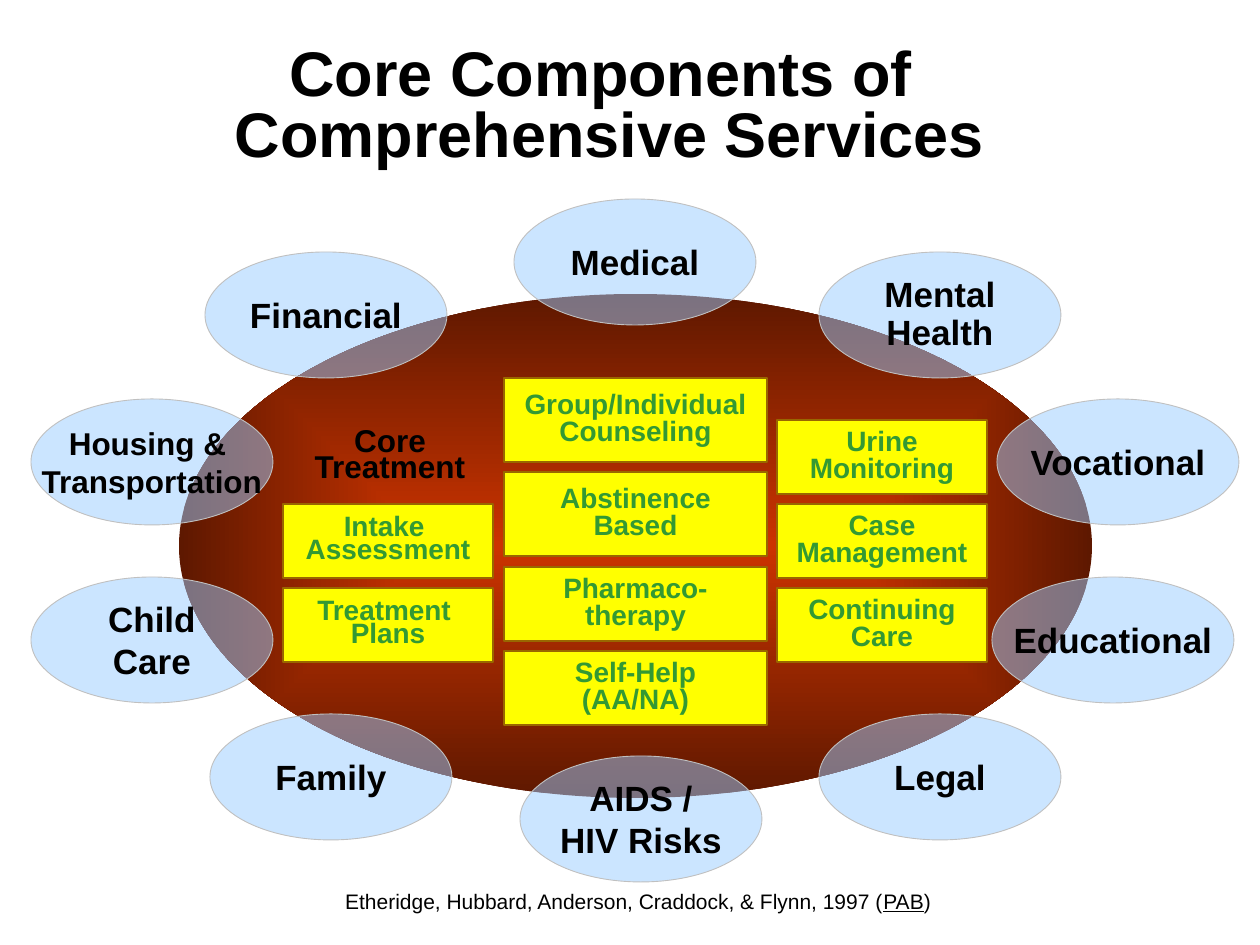
from lxml.etree import SubElement
from pptx import Presentation
from pptx.dml.color import RGBColor
from pptx.enum.shapes import MSO_SHAPE as SHAPE
from pptx.enum.text import MSO_ANCHOR as ANCHOR, MSO_AUTO_SIZE as AUTO, PP_ALIGN as ALIGN
from pptx.oxml.ns import qn
from pptx.util import Emu, Pt

SCALE = 914400 / 126


def px(n):
    return Emu(round(n * SCALE))


def rgb(value):
    return RGBColor.from_string(value)


class Deck:
    font = "Arial"
    ink = "000000"
    green = "339933"
    yellow = "FFFF00"
    brown = "996600"
    blue = "99CCFF"
    grey = "C0C0C0"
    core = ("CC3300", "5E1800")

    def __init__(self, slide):
        self.slide = slide

    def shape(self, kind, box, parent=None):
        sp = (parent or self.slide).shapes.add_shape(kind, *map(px, box))
        sp.shadow.inherit = False
        return sp

    def paint(self, sp, fill, line, width):
        sp.fill.solid()
        sp.fill.fore_color.rgb = rgb(fill)
        sp.line.color.rgb = rgb(line)
        sp.line.width = Pt(width)

    def run(self, p, text, size, color, bold=True, underline=None):
        r = p.add_run()
        r.text = text
        f = r.font
        f.name, f.size, f.bold, f.underline = self.font, Pt(size), bold, underline
        f.color.rgb = rgb(color)

    def fill_text(self, tf, paragraphs, size, color, spacing=None):
        for i, text in enumerate(paragraphs):
            p = tf.paragraphs[0] if i == 0 else tf.add_paragraph()
            p.alignment = ALIGN.CENTER
            p.line_spacing = spacing
            for j, line in enumerate(text.split("\n")):
                if j:
                    p.add_line_break()
                self.run(p, line, size, color)

    def label(self, box, parent=None, wrap=True, anchor=ANCHOR.TOP):
        sp = (parent or self.slide).shapes.add_textbox(*map(px, box))
        tf = sp.text_frame
        tf.word_wrap = wrap
        tf.auto_size = AUTO.SHAPE_TO_FIT_TEXT
        tf.vertical_anchor = anchor
        return tf

    def core_ellipse(self, box):
        sp = self.shape(SHAPE.OVAL, box)
        sp.line.fill.background()
        sp.fill.gradient()
        for stop, color in zip(sp.fill.gradient_stops, self.core):
            stop.color.rgb = rgb(color)
        grad = sp.element.spPr.find(qn("a:gradFill"))
        grad.remove(grad.find(qn("a:lin")))
        shade = SubElement(grad, qn("a:path"), {"path": "shape"})
        SubElement(shade, qn("a:fillToRect"), dict.fromkeys("ltrb", "50000"))

    def service(self, x, y, paragraphs, size=20, wrap=True, spacing=None):
        sp = self.shape(SHAPE.OVAL, (x, y, 242, 126))
        self.paint(sp, self.blue, self.grey, 0.5)
        color = sp.element.spPr.find(qn("a:solidFill"))[0]
        SubElement(color, qn("a:alpha"), {"val": "50000"})
        tf = sp.text_frame
        tf.margin_left = tf.margin_right = tf.margin_top = tf.margin_bottom = 0
        tf.word_wrap = wrap
        tf.vertical_anchor = ANCHOR.MIDDLE
        self.fill_text(tf, paragraphs, size, self.ink, spacing)

    def treatment(self, group, box, paragraphs, spacing):
        sp = self.shape(SHAPE.RECTANGLE, box, group)
        self.paint(sp, self.yellow, self.brown, 1)
        tf = sp.text_frame
        tf.word_wrap = True
        tf.vertical_anchor = ANCHOR.MIDDLE
        self.fill_text(tf, paragraphs, 16, self.green, spacing)

    def column(self, x, width, spacing, boxes):
        group = self.slide.shapes.add_group_shape()
        for y, height, paragraphs in boxes:
            self.treatment(group, (x, y, width, height), paragraphs, spacing)
        return group


def main():
    prs = Presentation()
    prs.slide_width, prs.slide_height = px(1260), px(945)
    d = Deck(prs.slides.add_slide(prs.slide_layouts[6]))

    title = d.label((32, 42, 1155, 134))
    d.fill_text(title, ["Core Components of \nComprehensive Services"], 36, d.ink, 0.8)

    d.core_ellipse((179, 294, 913, 504))

    d.service(514, 199, ["Medical"])
    d.service(819, 252, ["Mental Health"], spacing=0.9)
    d.service(997, 399, ["Vocational"], wrap=False)
    d.service(992, 577, ["Educational"], wrap=False)
    d.service(819, 714, ["Legal"])
    d.service(520, 756, ["AIDS / HIV Risks"])
    d.service(205, 252, ["Financial"])
    d.service(31, 399, ["Housing & ", "Transportation"], size=18, wrap=False)
    d.service(31, 577, ["Child\nCare"])
    d.service(210, 714, ["Family"])

    d.column(777, 210, 0.8, [
        (588, 74, ["Continuing Care"]),
        (504, 74, ["Case Management"]),
        (420, 74, ["Urine Monitoring"]),
    ])
    d.column(504, 263, 0.8, [
        (651, 74, ["Self-Help", "(AA/NA)"]),
        (567, 74, ["Pharmaco-therapy"]),
        (378, 84, ["Group/Individual Counseling"]),
        (472, 84, ["Abstinence", "Based"]),
    ])
    intake = d.column(283, 210, 0.7, [
        (504, 74, ["Intake ", "Assessment"]),
        (588, 74, ["Treatment ", "Plans"]),
    ])
    heading = d.label((276, 416, 228, 83), intake, wrap=False, anchor=ANCHOR.MIDDLE)
    d.fill_text(heading, ["Core", "Treatment"], 18, d.ink, 0.7)

    p = d.label((220, 882, 836, 38)).paragraphs[0]
    p.alignment = ALIGN.CENTER
    d.run(p, "Etheridge, Hubbard, Anderson, Craddock, & Flynn, 1997 (", 12, d.ink, False)
    d.run(p, "PAB", 12, d.ink, False, True)
    d.run(p, ")", 12, d.ink, False)

    prs.save("out.pptx")


if __name__ == "__main__":
    main()
